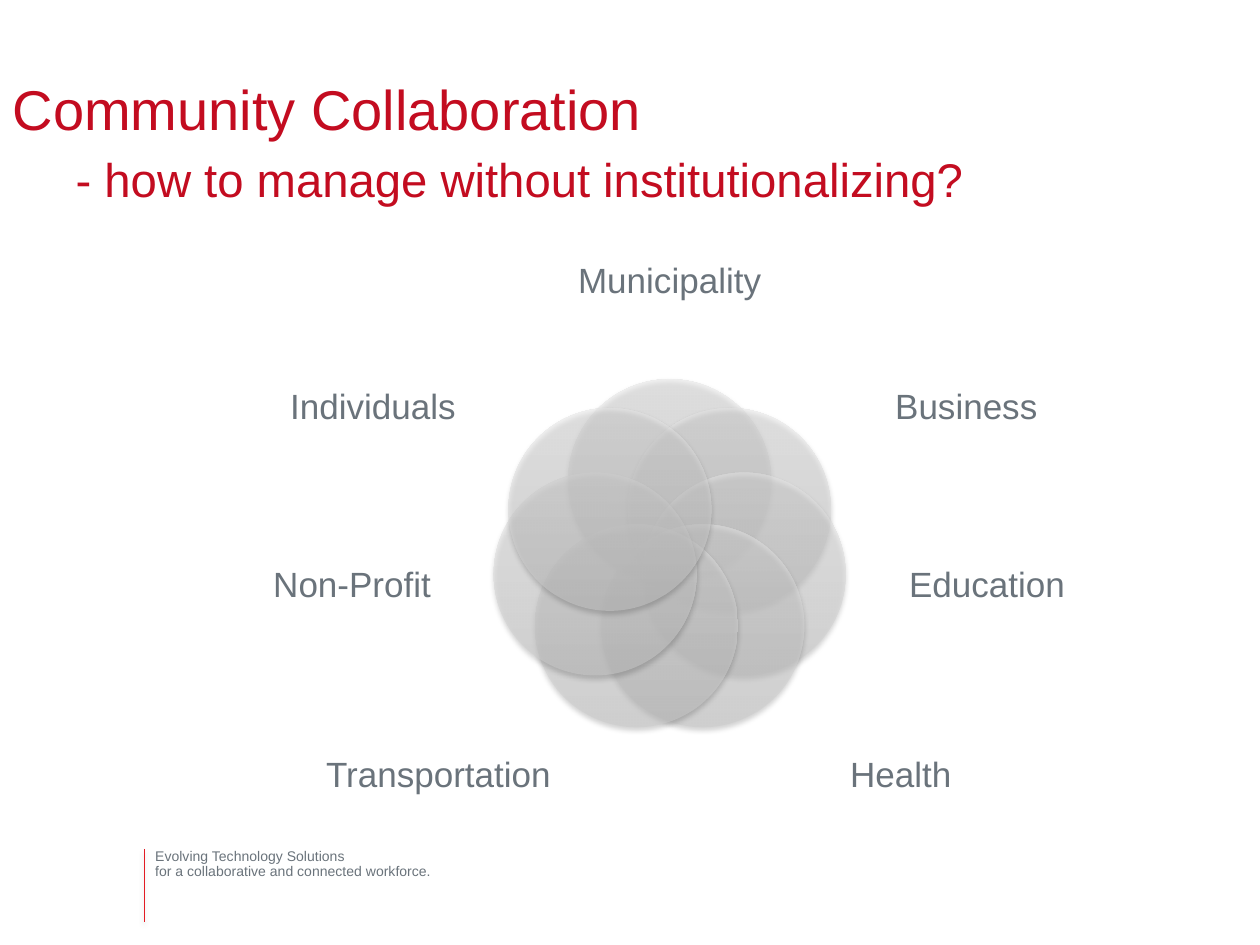
from dataclasses import dataclass
from math import cos, pi, sin

from lxml import etree
from pptx import Presentation
from pptx import util as u
from pptx.dml.color import RGBColor
from pptx.enum import shapes, text
from pptx.oxml.ns import qn


@dataclass(frozen=True)
class Theme:
    font: str = "Arial"
    title: str = "C30C20"
    body: str = "6A737B"
    rule: str = "E31B23"
    petal: tuple = ("CCCCCC", "E7E7E7")
    title_pt: int = 32
    subtitle_pt: int = 27
    label_pt: int = 20
    footer_pt: int = 8


T = Theme()
# Clockwise from the top: label and its centre relative to the ring's centre, in cm
SECTORS = [
    ("Municipality", 0, -5.54),
    ("Business", 5.98, -3),
    ("Education", 6.4, 0.59),
    ("Health", 4.66, 4.42),
    ("Transportation", -4.66, 4.42),
    ("Non-Profit", -6.4, 0.59),
    ("Individuals", -5.98, -3),
]


def box(x, y, w, h):
    return [u.Cm(v) for v in (x, y, w, h)]


def style(font, size, color):
    font.name, font.size = T.font, u.Pt(size)
    font.color.rgb = RGBColor.from_string(color)


def add_shadow(sp_pr, alpha, blur, dist):
    effects = sp_pr.find(qn("a:effectLst"))
    if effects is None:
        effects = etree.SubElement(sp_pr, qn("a:effectLst"))
    shadow = etree.SubElement(effects, qn("a:outerShdw"), blurRad=str(u.Pt(blur)),
                              dist=str(u.Pt(dist)), dir="5400000", rotWithShape="0")
    color = etree.SubElement(shadow, qn("a:srgbClr"), val="000000")
    etree.SubElement(color, qn("a:alpha"), val=str(alpha * 1000))


def add_text(parent, x, y, w, h, lines, size, align, anchor):
    tf = parent.add_textbox(*box(x, y, w, h)).text_frame
    tf.word_wrap, tf.vertical_anchor = True, anchor
    tf.margin_left = tf.margin_top = tf.margin_right = tf.margin_bottom = 0
    tf.text = lines
    for p in tf.paragraphs:
        p.alignment, p.line_spacing = align, 0.9
        style(p.runs[0].font, size, T.body)


def add_title(slide, x, y, w, h):
    sp = slide.shapes.title
    sp.left, sp.top, sp.width, sp.height = box(x, y, w, h)
    tf = sp.text_frame
    tf.word_wrap, tf.auto_size = True, text.MSO_AUTO_SIZE.NONE
    tf.vertical_anchor = text.MSO_ANCHOR.MIDDLE
    p = tf.paragraphs[0]
    p.alignment = text.PP_ALIGN.LEFT
    # Tab stop that indents the second line
    tabs = etree.SubElement(p._p.get_or_add_pPr(), qn("a:tabLst"))
    etree.SubElement(tabs, qn("a:tab"), pos=str(u.Cm(1.27)), algn="l")
    for words, size in (("Community Collaboration", T.title_pt), ("\t", T.title_pt),
                        ("- how to manage without institutionalizing?", T.subtitle_pt)):
        if words == "\t":
            p.add_line_break()
        r = p.add_run()
        r.text = words
        style(r.font, size, T.title)


def add_petal(group, cx, cy, d):
    sp = group.add_shape(shapes.MSO_SHAPE.OVAL, *box(cx - d / 2, cy - d / 2, d, d))
    sp.fill.gradient()
    sp.fill.gradient_angle = 90
    for stop, color in zip(sp.fill.gradient_stops, T.petal):
        stop.color.rgb = RGBColor.from_string(color)
    for color in sp._element.spPr.iter(qn("a:srgbClr")):
        etree.SubElement(color, qn("a:alpha"), val="50000")
    sp.line.fill.background()
    sp.shadow.inherit = False
    add_shadow(sp._element.spPr, 35, 3.1, 1.8)


def add_venn(slide, cx, cy, radius, d):
    group = slide.shapes.add_group_shape().shapes
    w, h = 4.6, 2.7
    for i, (label, dx, dy) in enumerate(SECTORS):
        angle = 2 * pi * i / len(SECTORS)
        add_petal(group, cx + radius * sin(angle), cy - radius * cos(angle), d)
        add_text(group, cx + dx - w / 2, cy + dy - h / 2, w, h, label, T.label_pt,
                 text.PP_ALIGN.CENTER, text.MSO_ANCHOR.MIDDLE)


def add_footer(slide, x, y, w, h):
    rule = slide.shapes.add_connector(shapes.MSO_CONNECTOR.STRAIGHT,
                                      u.Cm(x), u.Cm(y), u.Cm(x), u.Cm(y + h))
    rule.line.width = u.Pt(0.25)
    rule.line.color.rgb = RGBColor.from_string(T.rule)
    add_shadow(rule._element.spPr, 38, 3.1, 1.6)
    add_text(slide.shapes, x + 0.23, y, w - 0.23, 0.61,
             "Evolving Technology Solutions\nfor a collaborative and connected workforce.",
             T.footer_pt, text.PP_ALIGN.LEFT, text.MSO_ANCHOR.TOP)


def main():
    prs = Presentation()
    prs.slide_width, prs.slide_height = u.Cm(25.4), u.Cm(19.05)
    slide = prs.slides.add_slide(prs.slide_layouts.get_by_name("Title Only"))
    add_footer(slide, 2.9, 17.12, 7.44, 1.47)
    add_title(slide, 0, 1.27, 21.26, 3.18)
    add_venn(slide, 13.5, 11.23, 1.54, 4.09)
    prs.save("out.pptx")


if __name__ == "__main__":
    main()
